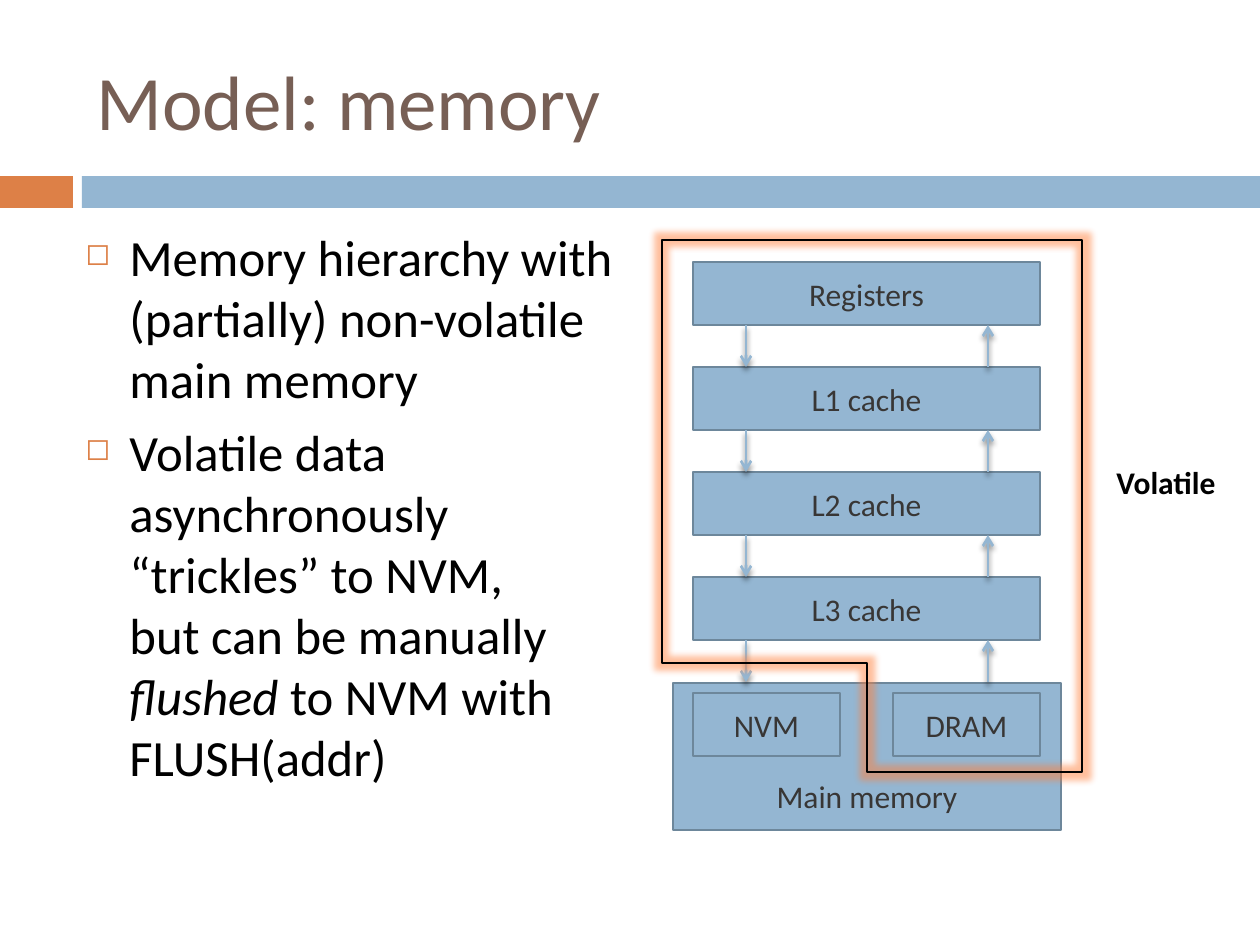
import pptx
import pptx.util
import pptx.dml.color
import pptx.enum.shapes
import pptx.enum.text
import pptx.oxml
import pptx.oxml.ns

PX = 914400 // 126
FONT = "Calibri"
BLUE, EDGE, ORANGE = "94B6D2", "6D879B", "DD8047"
DARK, BROWN, BLACK, WHITE = "383635", "775F55", "000000", "FFFFFF"
LEVELS = ["Registers", "L1 cache", "L2 cache", "L3 cache"]
LEFT, TOP, WIDTH, HEIGHT, STEP = 693, 262, 347, 63, 105
DOWN_X, UP_X = 746, 988

SHADOW = ('<a:outerShdw blurRad="38100" dist="30480" dir="5400000" rotWithShape="0">'
          '<a:srgbClr val="000000"><a:alpha val="45000"/></a:srgbClr></a:outerShdw>')
GLOW = ('<a:glow rad="101600"><a:srgbClr val="FF7F3A">'
        '<a:alpha val="50000"/></a:srgbClr></a:glow>')
ALIGN = pptx.enum.text.PP_ALIGN
ANCHOR = pptx.enum.text.MSO_ANCHOR


def px(*lengths):
    return [length * PX for length in lengths]


def color(value):
    return pptx.dml.color.RGBColor.from_string(value)


def element(tag, content="", attributes=""):
    """Make one DrawingML element from text."""
    space = pptx.oxml.ns.nsdecls("a")
    return pptx.oxml.parse_xml(f"<a:{tag} {space} {attributes}>{content}</a:{tag}>")


def style_line(shape, value):
    shape.line.color.rgb = color(value)
    shape.line.width = pptx.util.Pt(1.5)


def style_span(span, size, value, bold=None, italic=None):
    span.font.name = FONT
    span.font.size = pptx.util.Pt(size)
    span.font.color.rgb = color(value)
    span.font.bold = bold
    span.font.italic = italic


def add_block(page, area, fill, text="", edge=None, anchor=ANCHOR.MIDDLE):
    kind = pptx.enum.shapes.MSO_SHAPE.RECTANGLE
    box = page.shapes.add_shape(kind, *px(*area))
    box.shadow.inherit = False
    box.fill.solid()
    box.fill.fore_color.rgb = color(fill)
    if edge:
        style_line(box, edge)
    else:
        box.line.fill.background()
    if text:
        frame = box.text_frame
        frame.text = text
        frame.vertical_anchor = anchor
        frame.paragraphs[0].alignment = ALIGN.CENTER
        style_span(frame.paragraphs[0].runs[0], 18, DARK)
    return box


def add_label(page, area, text, size, value, align, bold=None):
    box = page.shapes.add_textbox(*px(*area))
    frame = box.text_frame
    frame.word_wrap = True
    frame.vertical_anchor = ANCHOR.MIDDLE
    frame.text = text
    frame.paragraphs[0].alignment = align
    style_span(frame.paragraphs[0].runs[0], size, value, bold)


def add_bullets(page, area, items):
    """Each item is a list of (text, italic) pairs."""
    frame = page.shapes.add_textbox(*px(*area)).text_frame
    frame.word_wrap = True
    for index, item in enumerate(items):
        para = frame.add_paragraph() if index else frame.paragraphs[0]
        para.text = "".join(text for text, _ in item[:1])
        for text, _ in item[1:]:
            para.add_run().text = text
        italics = [italic for _, italic in item]
        # A line break splits the first text into two runs.
        italics = italics[:1] * (len(para.runs) - len(item)) + italics
        for span, italic in zip(para.runs, italics):
            style_span(span, 29, BLACK, italic=italic)
        para.space_before = pptx.util.Pt(7)
        props = para._p.get_or_add_pPr()
        props.set("marL", str(44 * PX))
        props.set("indent", str(-44 * PX))
        props.append(element("buClr", f'<a:srgbClr val="{ORANGE}"/>'))
        props.append(element("buSzPct", attributes='val="60000"'))
        props.append(element("buChar", attributes='char="◻"'))


def add_arrow(page, x, start, end):
    kind = pptx.enum.shapes.MSO_CONNECTOR.STRAIGHT
    arrow = page.shapes.add_connector(kind, *px(x, start, x, end))
    style_line(arrow, BLUE)
    arrow.line._get_or_add_ln().append(element("tailEnd", attributes='type="arrow"'))
    arrow._element.spPr.append(element("effectLst", SHADOW))


def add_glowing_outline(page, points):
    builder = page.shapes.build_freeform(*points[0], scale=PX)
    builder.add_line_segments(points[1:], close=True)
    outline = builder.convert_to_shape()
    outline.fill.background()
    style_line(outline, BLACK)
    outline._element.spPr.append(element("effectLst", GLOW))


def add_hierarchy(page):
    main_memory = add_block(page, (673, 683, 388, 147), BLUE, "Main memory",
                            EDGE, ANCHOR.BOTTOM)
    main_memory.text_frame.margin_bottom = 15 * PX
    for index, name in enumerate(LEVELS):
        add_block(page, (LEFT, TOP + index * STEP, WIDTH, HEIGHT), BLUE, name, EDGE)
    for x, name in [(LEFT, "NVM"), (LEFT + WIDTH - 147, "DRAM")]:
        add_block(page, (x, 693, 147, HEIGHT), BLUE, name, EDGE)
    for index in range(len(LEVELS)):
        upper = TOP + index * STEP + HEIGHT
        lower = TOP + (index + 1) * STEP
        add_arrow(page, UP_X, lower, upper)
        add_arrow(page, DOWN_X, upper, lower)
    add_glowing_outline(page, [(662, 240), (1082, 240), (1082, 772),
                               (867, 772), (867, 663), (662, 663)])
    add_label(page, (1082, 450, 168, 63), "Volatile", 18, BLACK, ALIGN.CENTER, True)


def main():
    deck = pptx.Presentation()
    deck.slide_width, deck.slide_height = px(1260, 945)
    page = deck.slides.add_slide(deck.slide_layouts[6])
    page.background.fill.solid()
    page.background.fill.fore_color.rgb = color(WHITE)

    add_block(page, (0, 176, 73, 32), ORANGE)
    add_block(page, (82, 176, 1178, 32), BLUE)
    add_label(page, (84, 32, 1124, 136), "Model: memory", 44, BROWN, ALIGN.LEFT)
    add_hierarchy(page)
    add_bullets(page, (73, 220, 557, 651), [
        [("Memory hierarchy with (partially) non-volatile main memory", False)],
        [("Volatile data asynchronously “trickles” to NVM,\vbut can be manually ", False),
         ("flushed ", True), ("to NVM with FLUSH(addr)", False)],
    ])
    deck.save("out.pptx")


if __name__ == "__main__":
    main()
